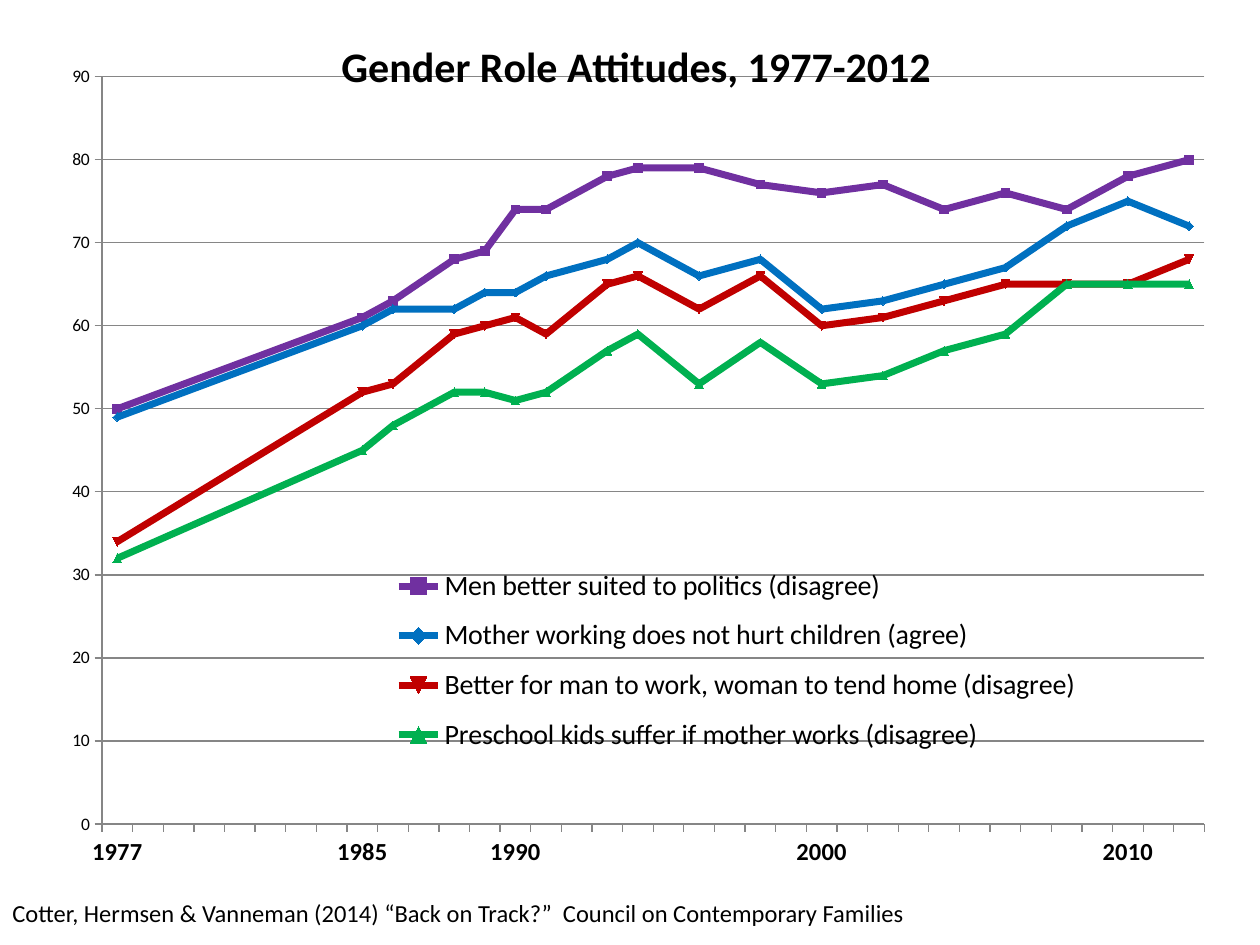
"""Line chart slide of gender role attitudes from 1977 to 2012."""
from lxml.etree import SubElement
from pptx import Presentation
from pptx.chart.data import CategoryChartData as ChartData
from pptx.dml.color import RGBColor as Rgb
from pptx.enum.chart import XL_CHART_TYPE as ChartType
from pptx.enum.chart import XL_LEGEND_POSITION as LegendSide
from pptx.enum.chart import XL_TICK_MARK as Tick
from pptx.enum.text import MSO_AUTO_SIZE as AutoSize
from pptx.oxml import parse_xml
from pptx.oxml.ns import nsdecls, qn
from pptx.util import Inches, Pt

COLORS = {"text": "000000", "axis": "868686", "politics": "7030A0",
          "mother": "0070C0", "home": "C00000", "preschool": "00B050"}
LABELLED = {1977, 1985, 1990, 2000, 2010}
SURVEYS = [1977, 1985, 1986, 1988, 1989, 1990, 1991, 1993, *range(1994, 2013, 2)]
ATTITUDES = {
    "politics": ("Men better suited to politics (disagree)",
                 [50, 61, 63, 68, 69, 74, 74, 78, 79, 79, 77, 76, 77, 74, 76, 74, 78, 80]),
    "mother": ("Mother working does not hurt children (agree)",
               [49, 60, 62, 62, 64, 64, 66, 68, 70, 66, 68, 62, 63, 65, 67, 72, 75, 72]),
    "home": ("Better for man to work, woman to tend home (disagree)",
             [34, 52, 53, 59, 60, 61, 59, 65, 66, 62, 66, 60, 61, 63, 65, 65, 65, 68]),
    "preschool": ("Preschool kids suffer if mother works (disagree)",
                  [32, 45, 48, 52, 52, 51, 52, 57, 59, 53, 58, 53, 54, 57, 59, 65, 65, 65]),
}


def style_font(font, size, bold=False):
    for name, value in {"name": "Calibri", "size": Pt(size), "bold": bold}.items():
        setattr(font, name, value)
    font.color.rgb = Rgb.from_string(COLORS["text"])


def place(element, index, **shares):
    for old in element.findall(qn("c:layout")):
        element.remove(old)
    layout = parse_xml(f"<c:layout {nsdecls('c')}><c:manualLayout/></c:layout>")
    for tag, value in shares.items():
        SubElement(layout[0], qn(f"c:{tag}")).set("val", str(value))
    element.insert(index, layout)


deck = Presentation()
deck.slide_width, deck.slide_height = Inches(10), Inches(7.5)
width, height = deck.slide_width, deck.slide_height
page = deck.slides.add_slide(deck.slide_layouts[6])

box = page.shapes.add_textbox(0, int(height * 0.944), int(width * 0.827), int(height * 0.045))
box.text_frame.word_wrap = False
box.text_frame.auto_size = AutoSize.SHAPE_TO_FIT_TEXT
span = box.text_frame.paragraphs[0].add_run()
span.text = "Cotter, Hermsen & Vanneman (2014) “Back on Track?”  Council on Contemporary Families"
style_font(span.font, 14)

years = range(1977, 2013)
data = ChartData()
data.categories = [str(year) if year in LABELLED else "" for year in years]
for name, values in ATTITUDES.values():
    by_year = dict(zip(SURVEYS, values))
    data.add_series(name, [by_year.get(year) for year in years])
chart = page.shapes.add_chart(ChartType.LINE, 0, 0, width, int(height * 0.923), data).chart
style_font(chart.font, 10)

chart.has_title = True
title = chart.chart_title
title.text_frame.text = "Gender Role Attitudes, 1977-2012"
style_font(title.text_frame.paragraphs[0].runs[0].font, 24, True)

chart.has_legend = True
legend = chart.legend
legend.position = LegendSide.RIGHT
legend.include_in_layout = True
style_font(legend.font, 16)

for key, line in zip(ATTITUDES, chart.plots[0].series):
    line.smooth = False
    line.marker.style = None
    line.format.line.width = Pt(4)
    line.format.line.color.rgb = Rgb.from_string(COLORS[key])

years_axis, share_axis = chart.category_axis, chart.value_axis
for name, value in {"minimum_scale": 0, "maximum_scale": 90, "major_unit": 10,
                    "has_major_gridlines": True}.items():
    setattr(share_axis, name, value)
for axis in (years_axis, share_axis):
    axis.major_tick_mark = Tick.OUTSIDE
for stroke in (years_axis.format.line, share_axis.format.line,
               share_axis.major_gridlines.format.line):
    stroke.width = Pt(0.75)
    stroke.color.rgb = Rgb.from_string(COLORS["axis"])
style_font(years_axis.tick_labels.font, 14, True)
style_font(share_axis.tick_labels.font, 10)

root = chart.element
place(root.find(".//" + qn("c:plotArea")), 0, layoutTarget="inner", xMode="edge",
      yMode="edge", x=0.081, y=0.088, w=0.875, h=0.857)
place(root.find(".//" + qn("c:title")), 1, xMode="edge", yMode="edge", x=0.265, y=0.035)
place(root.find(".//" + qn("c:legend")), 1, xMode="edge", yMode="edge",
      x=0.3, y=0.635, w=0.57, h=0.245)
root.find(".//" + qn("c:dispBlanksAs")).set("val", "span")
label_step = parse_xml(f"<c:tickLblSkip {nsdecls('c')} val='1'/>")
root.find(".//" + qn("c:noMultiLvlLbl")).addprevious(label_step)

deck.save("out.pptx")
